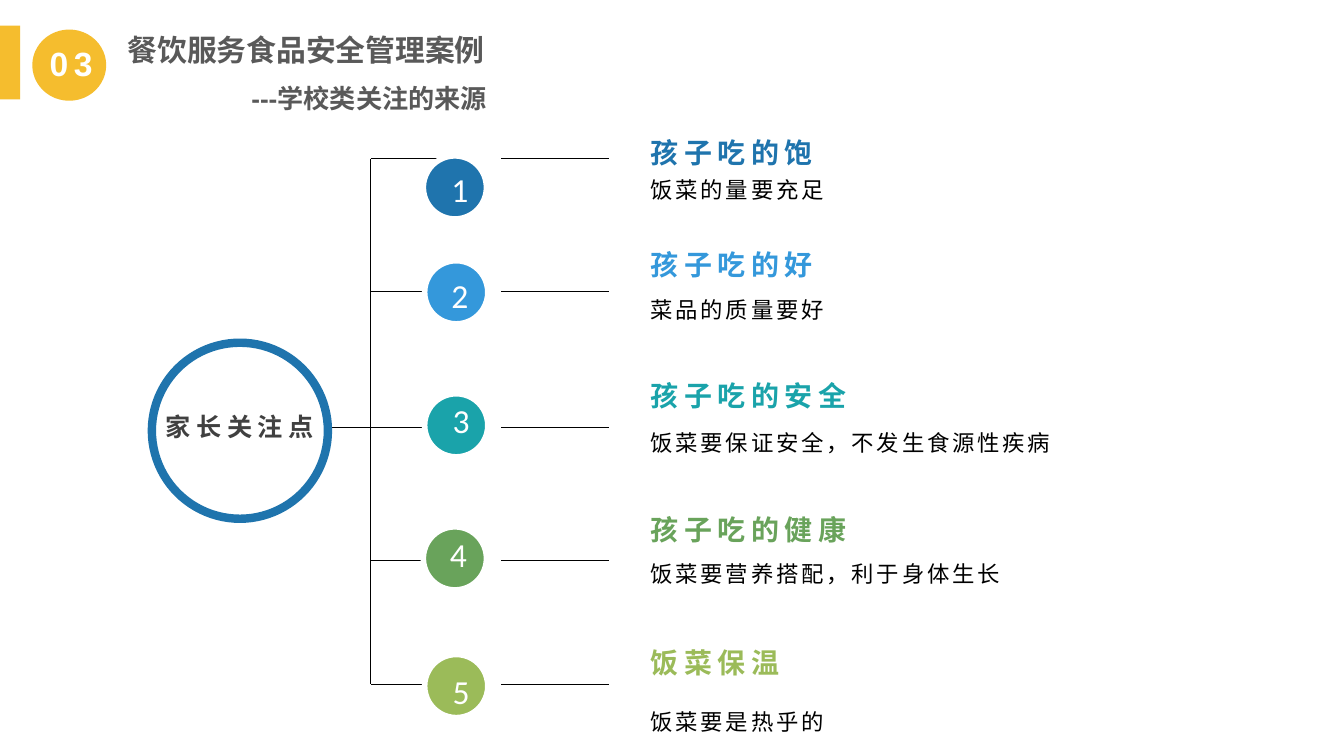
from lxml.etree import SubElement
from pptx import Presentation
from pptx.dml.color import RGBColor
from pptx.enum.shapes import MSO_CONNECTOR, MSO_SHAPE
from pptx.enum.text import MSO_ANCHOR, MSO_AUTO_SIZE, PP_ALIGN
from pptx.oxml.ns import qn
from pptx.util import Inches, Pt

HAN = "Noto Sans CJK SC"
YELLOW, BLUE, WHITE, BLACK = "F5BD2E", "1F74AD", "FFFFFF", "000000"
TITLE = [("餐饮服务食品安全管理案例", 16, 0), ("---学校类关注的来源", 14, 0.92)]
SECTION = "03"
HUB = "家长关注点"
POINTS = [
    {"head": "孩子吃的饱", "note": "饭菜的量要充足", "color": BLUE, "note_width": 2.68,
     "line": 1.18, "circle": (3.15, 1.16), "number": (3.26, 1.21), "head_top": 0.85, "note_top": 1.23},
    {"head": "孩子吃的好", "note": "菜品的质量要好", "color": "3498DB", "note_width": 2.68,
     "line": 2.17, "circle": (3.16, 1.94), "number": (3.26, 2.0), "head_top": 1.68, "note_top": 2.12},
    {"head": "孩子吃的安全", "note": "饭菜要保证安全，不发生食源性疾病", "color": "1AA3AA", "note_width": 3.83,
     "line": 3.18, "circle": (3.16, 2.93), "number": (3.27, 2.93), "head_top": 2.66, "note_top": 3.11},
    {"head": "孩子吃的健康", "note": "饭菜要营养搭配，利于身体生长", "color": "69A35B", "note_width": 3.29,
     "line": 4.17, "circle": (3.15, 3.92), "number": (3.25, 3.92), "head_top": 3.65, "note_top": 4.09},
    {"head": "饭菜保温", "note": "饭菜要是热乎的", "color": "9BBB59", "note_width": 2.67,
     "line": 5.09, "circle": (3.16, 4.87), "number": (3.27, 4.94), "head_top": 4.64, "note_top": 5.19},
]
TRUNK, BRANCH_END, LEAD_START, LEAD_END = 2.76, 3.42, 3.73, 4.53
HUB_EDGE, HUB_LINE = 2.47, POINTS[2]["line"]
CIRCLE = 0.47
TEXT_LEFT, HEAD_WIDTH, TEXT_HEIGHT = 4.77, 2.67, 0.41
TIGHT = (0.07, 0.04, 0.07, 0.04)
FLUSH = (0.07, 0.04, 0.07, 0)


def rgb(color):
    return RGBColor.from_string(color)


def style(paragraph, size, face, color, bold=False, spacing=0, leading=None):
    font = paragraph.font
    font.size, font.name, font.bold = Pt(size), face, bold
    font.color.rgb = rgb(color)
    paragraph.line_spacing = leading
    properties = paragraph._p.pPr.find(qn("a:defRPr"))
    properties.set("spc", str(int(spacing * 100)))
    SubElement(properties, qn("a:ea")).set("typeface", HAN)


def add_shape(page, kind, left, top, width, height, fill, line=None, weight=0):
    shape = page.shapes.add_shape(kind, Inches(left), Inches(top), Inches(width), Inches(height))
    shape.shadow.inherit = False
    shape.fill.solid()
    shape.fill.fore_color.rgb = rgb(fill)
    if line:
        shape.line.color.rgb = rgb(line)
        shape.line.width = Pt(weight)
    else:
        shape.line.fill.background()


def add_line(page, x1, y1, x2, y2):
    line = page.shapes.add_connector(
        MSO_CONNECTOR.STRAIGHT, Inches(x1), Inches(y1), Inches(x2), Inches(y2))
    line.line.color.rgb = rgb(BLACK)
    line.line.width = Pt(0.5)
    SubElement(line._element.spPr, qn("a:effectLst"))


def add_text(page, text, left, top, width, height, size, face, color, insets=(0.1, 0.05, 0.1, 0.05),
             wrap=True, anchor=MSO_ANCHOR.TOP, align=PP_ALIGN.LEFT, **look):
    box = page.shapes.add_textbox(Inches(left), Inches(top), Inches(width), Inches(height))
    frame = box.text_frame
    frame.word_wrap, frame.vertical_anchor = wrap, anchor
    (frame.margin_left, frame.margin_top,
     frame.margin_right, frame.margin_bottom) = map(Inches, insets)
    paragraph = frame.paragraphs[0]
    paragraph.text, paragraph.alignment = text, align
    style(paragraph, size, face, color, **look)


def add_title(page):
    title = page.shapes.title
    title.left, title.top, title.width, title.height = map(Inches, (0.85, 0.05, 2.97, 0.86))
    frame = title.text_frame
    frame.text = "\n".join(text for text, size, indent in TITLE)
    frame.word_wrap, frame.auto_size = True, MSO_AUTO_SIZE.NONE
    frame.vertical_anchor = MSO_ANCHOR.TOP
    for paragraph, (text, size, indent) in zip(frame.paragraphs, TITLE):
        paragraph.alignment = PP_ALIGN.LEFT
        paragraph._p.get_or_add_pPr().set("marL", str(Inches(indent)))
        style(paragraph, size, "Arial", "595959", bold=True, leading=1.5)


def add_point(page, number, point):
    y, color = point["line"], point["color"]
    add_line(page, TRUNK, y, BRANCH_END, y)
    add_line(page, LEAD_START, y, LEAD_END, y)
    add_shape(page, MSO_SHAPE.OVAL, *point["circle"], CIRCLE, CIRCLE, color, WHITE, 3)
    add_text(page, str(number), *point["number"], 0.26, 0.4, 18, "Calibri", WHITE)
    add_text(page, point["head"], TEXT_LEFT, point["head_top"], HEAD_WIDTH, TEXT_HEIGHT, 15, HAN, color,
             FLUSH, anchor=MSO_ANCHOR.BOTTOM, bold=True, spacing=3, leading=1.2)
    add_text(page, point["note"], TEXT_LEFT, point["note_top"], point["note_width"], TEXT_HEIGHT, 12, HAN,
             BLACK, TIGHT, spacing=1.5, leading=1.2)


def main():
    deck = Presentation()
    deck.slide_width = Inches(10)
    deck.slide_height = deck.slide_width * 9 // 16
    page = deck.slides.add_slide(deck.slide_layouts[5])
    add_title(page)
    add_shape(page, MSO_SHAPE.OVAL, 0.24, 0.22, 0.55, 0.53, YELLOW)
    add_shape(page, MSO_SHAPE.RECTANGLE, -0.01, 0.19, 0.16, 0.55, YELLOW)
    add_text(page, SECTION, 0.3, 0.28, 0.5, 0.37, 18, "Arial", WHITE, TIGHT,
             wrap=False, bold=True, spacing=3)
    add_line(page, HUB_EDGE, HUB_LINE, TRUNK, HUB_LINE)
    add_shape(page, MSO_SHAPE.OVAL, 1.13, 2.55, 1.31, 1.31, WHITE, BLUE, 4.5)
    add_text(page, HUB, 0.97, 2.97, 1.63, 0.47, 13.5, HAN, "404040",
             align=PP_ALIGN.CENTER, bold=True, spacing=3, leading=1.2)
    add_line(page, TRUNK, POINTS[0]["line"], TRUNK, POINTS[-1]["line"])
    for number, point in enumerate(POINTS, 1):
        add_point(page, number, point)
    deck.save("out.pptx")


if __name__ == "__main__":
    main()
